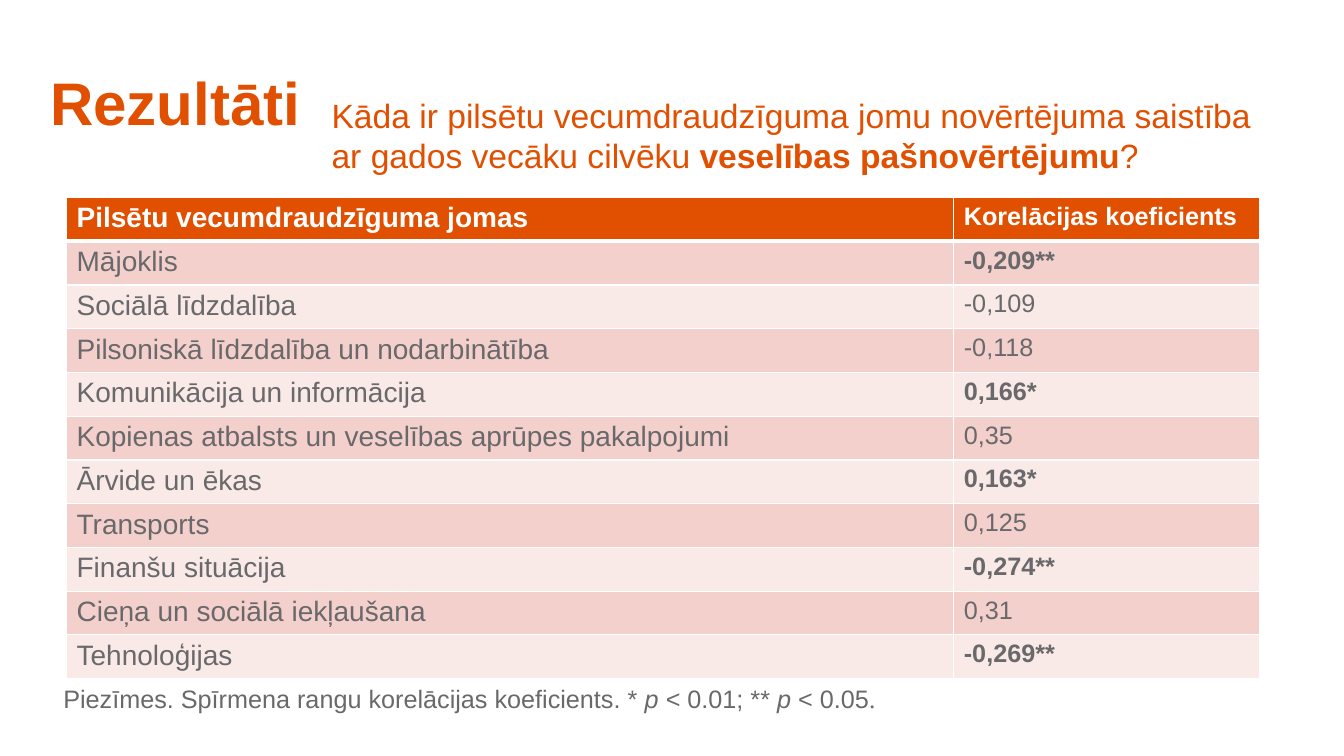
from dataclasses import dataclass
from lxml import etree
from pptx import Presentation
from pptx.dml.color import RGBColor
from pptx.enum.text import MSO_ANCHOR
from pptx.oxml.ns import qn
from pptx.util import Inches, Pt

MIDDLE = MSO_ANCHOR.MIDDLE
TOP = MSO_ANCHOR.TOP


@dataclass
class Theme:
    font: str = "Arial"
    serif: str = "Times New Roman"
    accent: str = "E14F01"
    text: str = "69696B"
    white: str = "FFFFFF"
    bands: tuple = ("F4D0CC", "F9E9E7")
    title: float = 42.9
    lead: int = 24
    label: int = 20
    small: int = 18


theme = Theme()


def add_run(para, text, size, color, bold=False, italic=False, face=theme.font):
    run = para.add_run()
    run.text = text
    font = run.font
    font.name = face
    font.size = Pt(size)
    font.bold = bold
    font.italic = italic
    font.color.rgb = RGBColor.from_string(color)


def add_box(left, top, width, height, anchor=TOP, wrap=True):
    box = slide.shapes.add_textbox(Inches(left), Inches(top), Inches(width), Inches(height))
    frame = box.text_frame
    frame.word_wrap = wrap
    frame.vertical_anchor = anchor
    return frame.paragraphs[0]


prs = Presentation()
prs.slide_width = Inches(13.33)
prs.slide_height = Inches(7.5)
slide = prs.slides.add_slide(prs.slide_layouts[6])

title = add_box(0.4, 0.14, 5.02, 1.66, MIDDLE)
title.line_spacing = 1.1
add_run(title, "Rezultāti", theme.title, theme.accent, bold=True)

lead = add_box(3.19, 0.89, 9.49, 0.91)
for text, bold in [
    ("Kāda ir pilsētu vecumdraudzīguma jomu novērtējuma saistība ar gados vecāku cilvēku ", False),
    ("veselības pašnovērtējumu", True),
    ("?", False),
]:
    add_run(lead, text, theme.lead, theme.accent, bold)

rows = [
    ("Pilsētu vecumdraudzīguma jomas", "Korelācijas koeficients"),
    ("Mājoklis", "-0,209**"),
    ("Sociālā līdzdalība", "-0,109"),
    ("Pilsoniskā līdzdalība un nodarbinātība", "-0,118"),
    ("Komunikācija un informācija", "0,166*"),
    ("Kopienas atbalsts un veselības aprūpes pakalpojumi", "0,35"),
    ("Ārvide un ēkas", "0,163*"),
    ("Transports", "0,125"),
    ("Finanšu situācija", "-0,274**"),
    ("Cieņa un sociālā iekļaušana", "0,31"),
    ("Tehnoloģijas", "-0,269**"),
]
table = slide.shapes.add_table(
    len(rows), 2, Inches(0.66), Inches(1.96), Inches(11.83), Inches(4.77)
).table
for col, width in zip(table.columns, (8.8, 3.03)):
    col.width = Inches(width)

for i, row in enumerate(rows):
    head = i == 0
    fill = theme.accent if head else theme.bands[(i - 1) % 2]
    color = theme.white if head else theme.text
    for j, text in enumerate(row):
        cell = table.cell(i, j)
        props = cell._tc.get_or_add_tcPr()
        for side in ("lnL", "lnR", "lnT", "lnB"):
            thick = (i, side) in ((0, "lnB"), (1, "lnT"))
            line = etree.SubElement(props, qn("a:" + side), w=str(Pt(3 if thick else 1)))
            solid = etree.SubElement(line, qn("a:solidFill"))
            etree.SubElement(solid, qn("a:srgbClr"), val=theme.white)
        cell.fill.solid()
        cell.fill.fore_color.rgb = RGBColor.from_string(fill)
        size = theme.small if j else theme.label
        add_run(cell.text_frame.paragraphs[0], text, size, color, head or "*" in text)

note = add_box(0.53, 6.73, 8.3, 0.4, wrap=False)
for text, italic, face in [
    ("Piezīmes. Spīrmena rangu korelācijas koeficients. * ", False, theme.font),
    ("p ", True, theme.font),
    ("< 0.01; ** ", False, theme.font),
    ("p", True, theme.font),
    (" < 0.05", False, theme.font),
    (".", False, theme.serif),
]:
    add_run(note, text, theme.small, theme.text, italic=italic, face=face)

prs.save("out.pptx")
